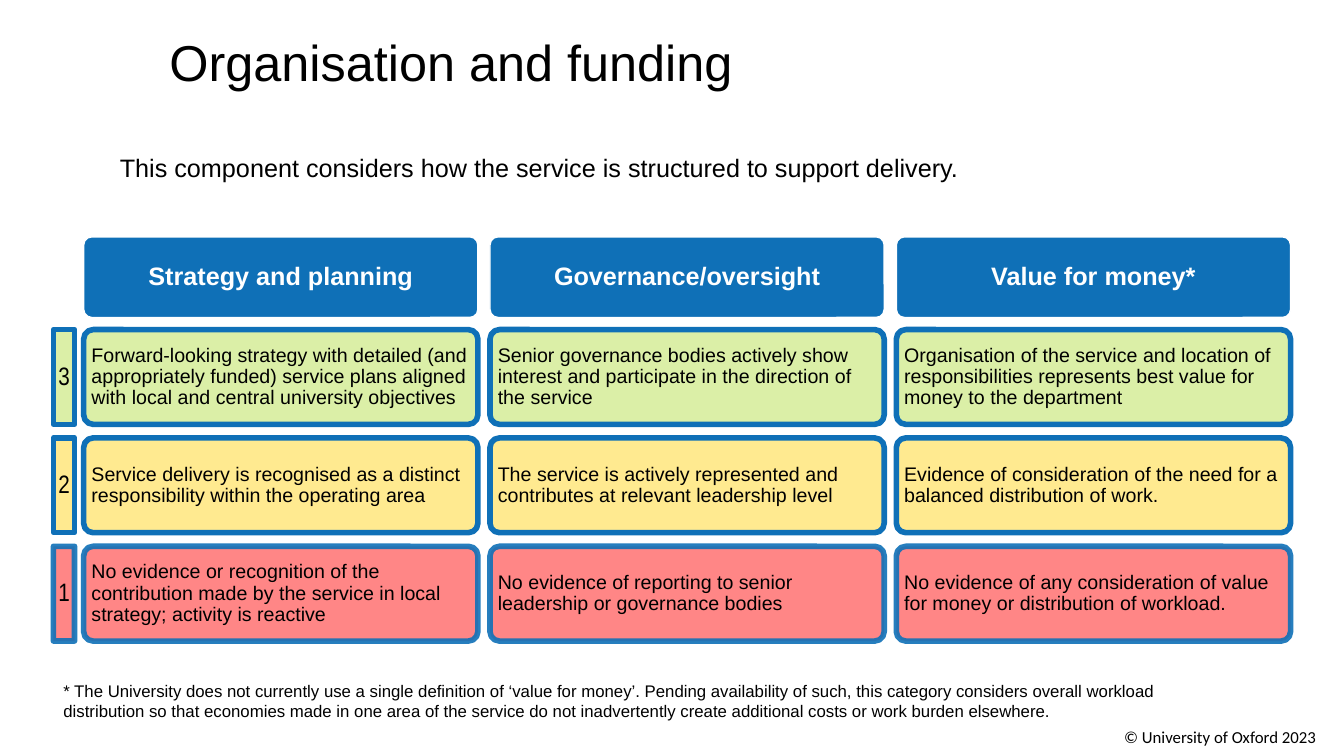
from lxml import etree
from pptx import Presentation
from pptx.dml.color import RGBColor
from pptx.enum.shapes import MSO_SHAPE
from pptx.enum.text import MSO_ANCHOR, MSO_AUTO_SIZE, PP_ALIGN
from pptx.oxml.ns import qn
from pptx.util import Inches, Pt

RECT, ROUNDED = MSO_SHAPE.RECTANGLE, MSO_SHAPE.ROUNDED_RECTANGLE
LEFT, CENTER = PP_ALIGN.LEFT, PP_ALIGN.CENTER
TOP, MIDDLE = MSO_ANCHOR.TOP, MSO_ANCHOR.MIDDLE

BLACK = RGBColor(0x00, 0x00, 0x00)
WHITE = RGBColor(0xFF, 0xFF, 0xFF)
BLUE = RGBColor(0x0F, 0x70, 0xB7)
GREEN = RGBColor(0xD8, 0xEE, 0x9E)
YELLOW = RGBColor(0xFF, 0xE8, 0x85)
RED = RGBColor(0xFF, 0x79, 0x79)

HEADINGS = ["Strategy and planning", "Governance/oversight", "Value for money*"]
# Level, fill, outline opacity in percent, one description per heading
LEVELS = [
    ("3", GREEN, 100, [
        "Forward-looking strategy with detailed (and appropriately funded) service "
        "plans aligned with local and central university objectives",
        "Senior governance bodies actively show interest and participate in the "
        "direction of the service",
        "Organisation of the service and location of responsibilities represents "
        "best value for money to the department"]),
    ("2", YELLOW, 100, [
        "Service delivery is recognised as a distinct responsibility within the "
        "operating area",
        "The service is actively represented and contributes at relevant "
        "leadership level",
        "Evidence of consideration of the need for a balanced distribution of work."]),
    ("1", RED, 90, [
        "No evidence or recognition of the contribution made by the service in "
        "local strategy; activity is reactive",
        "No evidence of reporting to senior leadership or governance bodies",
        "No evidence of any consideration of value for money or distribution of "
        "workload."]),
]
FOOTNOTE = (
    "* The University does not currently use a single definition of ‘value for "
    "money’. Pending availability of such, this category considers overall "
    "workload distribution so that economies made in one area of the service do "
    "not inadvertently create additional costs or work burden elsewhere.")


def write(tf, text, size, font="Arial", color=BLACK, bold=False, align=LEFT):
    p = tf.paragraphs[0]
    p.alignment = align
    r = p.add_run()
    r.text = text
    r.font.name, r.font.size, r.font.bold = font, Pt(size), bold
    r.font.color.rgb = color
    return p


def set_opacity(fill_parent, percent):
    """Make the solid fill under the given XML element partly transparent."""
    color = fill_parent.find(qn("a:solidFill"))[0]
    etree.SubElement(color, qn("a:alpha"), val=str(percent * 1000))


def add_title(s, text, left, top, width, height):
    sp = s.shapes.title
    sp.left, sp.top = Inches(left), Inches(top)
    sp.width, sp.height = Inches(width), Inches(height)
    tf = sp.text_frame
    tf.auto_size, tf.vertical_anchor = MSO_AUTO_SIZE.NONE, TOP
    write(tf, text, 36)


def add_text(s, text, size, left, top, width, height,
             font="Arial", anchor=TOP, wrap=True):
    sp = s.shapes.add_textbox(Inches(left), Inches(top), Inches(width), Inches(height))
    tf = sp.text_frame
    tf.word_wrap, tf.vertical_anchor = wrap, anchor
    write(tf, text, size, font)


def add_cell(s, preset, left, top, width, height, fill, line, line_width, text, size,
             fill_opacity=100, line_opacity=100, **style):
    sp = s.shapes.add_shape(preset, Inches(left), Inches(top),
                            Inches(width), Inches(height))
    sp.shadow.inherit = False
    if preset == ROUNDED:
        sp.adjustments[0] = 0.1
    sp.fill.solid()
    sp.fill.fore_color.rgb = fill
    sp.line.color.rgb = line
    sp.line.width = Pt(line_width)
    if fill_opacity < 100:
        set_opacity(sp._element.spPr, fill_opacity)
    if line_opacity < 100:
        set_opacity(sp.line._get_or_add_ln(), line_opacity)
    tf = sp.text_frame
    tf.word_wrap, tf.vertical_anchor = True, MIDDLE
    tf.margin_left = tf.margin_right = tf.margin_top = tf.margin_bottom = Inches(0.05)
    write(tf, text, size, **style).line_spacing = 0.9


def add_matrix(s, left, top, width, height):
    """Draw the headings over a grid of levels, numbered down the left side."""
    label_w, label_gap, gap = 0.21, 0.09, 0.12
    head_h, cell_h = 0.8, 0.94
    grid_left = left + label_w + label_gap
    cell_w = (left + width - grid_left - gap * (len(HEADINGS) - 1)) / len(HEADINGS)
    columns = [grid_left + i * (cell_w + gap) for i in range(len(HEADINGS))]
    first_row = top + head_h + gap
    pitch = (top + height - cell_h - first_row) / (len(LEVELS) - 1)

    for x, heading in zip(columns, HEADINGS):
        add_cell(s, ROUNDED, x, top, cell_w, head_h, BLUE, WHITE, 1, heading, 18,
                 color=WHITE, bold=True, align=CENTER)
    for i, (level, fill, line_opacity, descriptions) in enumerate(LEVELS):
        y = first_row + i * pitch
        opacity = {"fill_opacity": 90, "line_opacity": line_opacity}
        add_cell(s, RECT, left, y, label_w, cell_h, fill, BLUE, 4, level, 18,
                 font="Arial Narrow", **opacity)
        for x, description in zip(columns, descriptions):
            add_cell(s, ROUNDED, x, y, cell_w, cell_h, fill, BLUE, 4,
                     description, 14, **opacity)


def main():
    prs = Presentation()
    prs.slide_width, prs.slide_height = Inches(13.33), Inches(7.5)
    s = prs.slides.add_slide(prs.slide_layouts[5])
    add_title(s, "Organisation and funding", 1.58, 0.26, 9, 0.71)
    add_text(s, "This component considers how the service is structured to support "
             "delivery.", 18, 1.09, 1.46, 9.99, 0.4, anchor=MIDDLE)
    add_matrix(s, 0.53, 2.35, 12.27, 4.01)
    add_text(s, FOOTNOTE, 12, 0.53, 6.7, 11.21, 0.5)
    add_text(s, "© University of Oxford 2023", 12, 11.05, 7.16, 2.29, 0.3,
             font="Calibri", wrap=False)
    prs.save("out.pptx")


if __name__ == "__main__":
    main()
